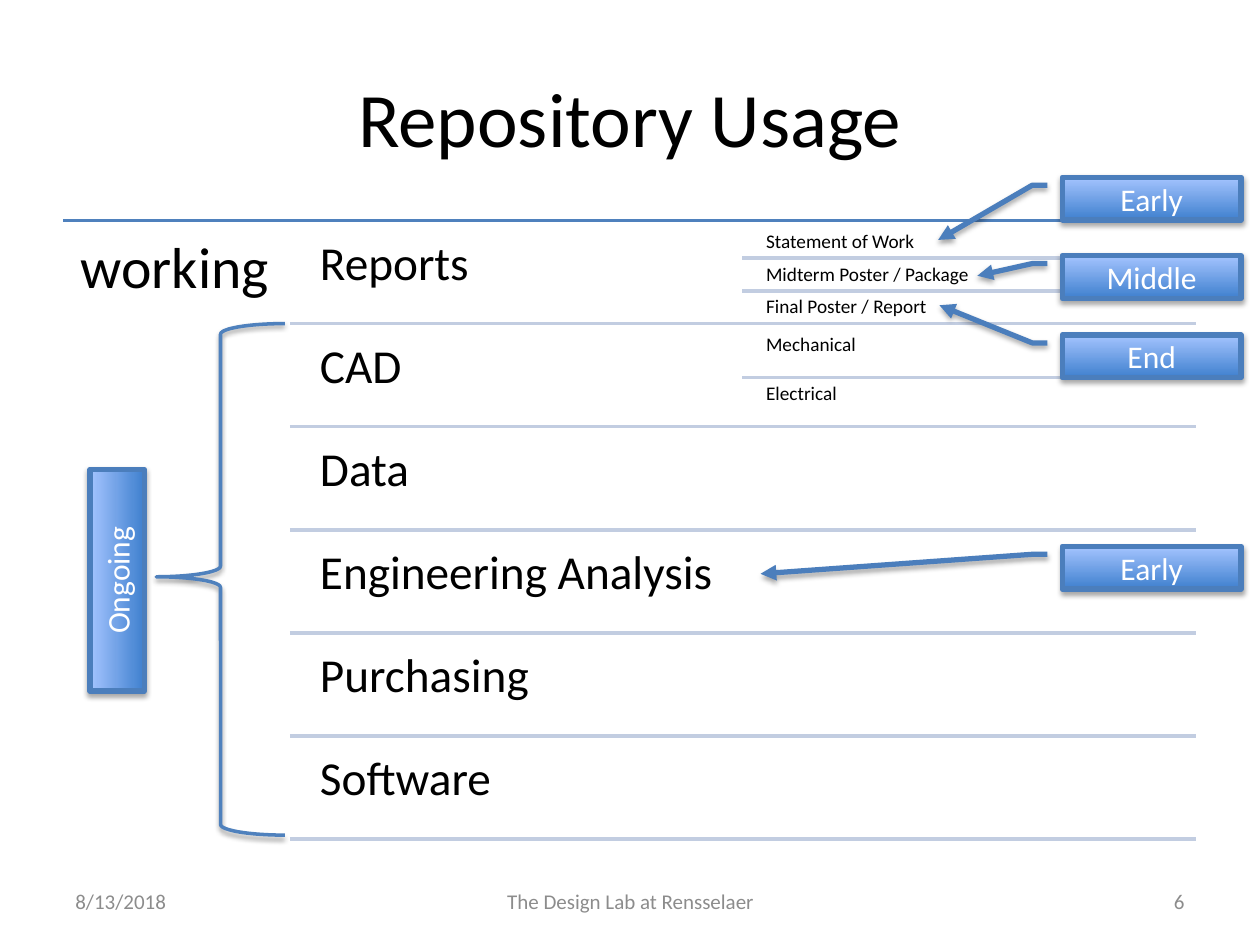
from dataclasses import dataclass

import pptx
import pptx.util
from lxml import etree
from pptx.dml.color import RGBColor
from pptx.enum.shapes import MSO_CONNECTOR, MSO_SHAPE
from pptx.enum.text import MSO_ANCHOR, PP_ALIGN
from pptx.oxml.ns import qn

COLORS = {
    "text": "000000", "footer": "8C8C8C", "label": "FFFFFF",
    "rule": "4F81BD", "divider": "C2CDE1", "border": "4B7EBC",
    "dark": "3F80CE", "light": "A4C4FF", "shadow": "000000",
}
FONT = "Calibri"

presentation = pptx.Presentation()
presentation.slide_width = pptx.util.Inches(10)
presentation.slide_height = pptx.util.Inches(7.5)
slide = presentation.slides.add_slide(presentation.slide_layouts[5])

# Grid: ten columns across the slide, six folder rows below the top rule
COLUMN = presentation.slide_width / 10
TOP, BOTTOM = 1.75, 6.66
ROW = (BOTTOM - TOP) / 6
GAP = 0.04


@dataclass
class Folder:
    name: str
    children: tuple[str, ...] = ()


@dataclass
class Callout:
    text: str
    row: float
    target_y: float  # arrow tip, as shares of the callout's own size
    target_x: float


FOLDERS = [
    Folder("Reports", ("Statement of Work", "Midterm Poster / Package", "Final Poster / Report")),
    Folder("CAD", ("Mechanical", "Electrical")),
    Folder("Data"),
    Folder("Engineering Analysis"),
    Folder("Purchasing"),
    Folder("Software"),
]
CALLOUTS = [
    Callout("Early", -0.42, 1.465, -0.693),
    Callout("Middle", 0.34, 0.473, -0.474),
    Callout("End", 1.11, -0.691, -0.686),
    Callout("Early", 3.16, 0.643, -1.686),
]


def columns(*values: float) -> list[int]:
    return [round(value * COLUMN) for value in values]


def row_top(index: float) -> float:
    return TOP + index * ROW


def color(name: str) -> RGBColor:
    return RGBColor.from_string(COLORS[name])


def format_text(shape, text: str, size: float, color_name: str, align=None, anchor=MSO_ANCHOR.MIDDLE) -> None:
    frame = shape.text_frame
    frame.text = text
    frame.word_wrap = True
    frame.vertical_anchor = anchor
    paragraph = frame.paragraphs[0]
    paragraph.alignment = align
    font = paragraph.runs[0].font
    font.name, font.size = FONT, pptx.util.Pt(size)
    font.color.rgb = color(color_name)


def add_label(text: str, left: float, top: float, width: float, height: float, size: float, inset: float) -> None:
    box = slide.shapes.add_textbox(*columns(left, top, width, height))
    format_text(box, text, size, "text", anchor=MSO_ANCHOR.TOP)
    frame = box.text_frame
    frame.margin_left = frame.margin_top = frame.margin_right = frame.margin_bottom = columns(inset)[0]
    frame.paragraphs[0].line_spacing = 0.9


def add_rule(left: float, right: float, top: float, color_name: str) -> None:
    line = slide.shapes.add_connector(MSO_CONNECTOR.STRAIGHT, *columns(left, top, right, top))
    line.line.color.rgb = color(color_name)
    line.line.width = pptx.util.Pt(2)
    etree.SubElement(line._element.spPr, qn("a:effectLst"))


def add_shadow(shape, opacity: int, distance: float) -> None:
    shape.shadow.inherit = False
    effects = shape._element.spPr.find(qn("a:effectLst"))
    shadow = etree.SubElement(
        effects, qn("a:outerShdw"), blurRad=str(pptx.util.Pt(3.1)),
        dist=str(pptx.util.Pt(distance)), dir="5400000", rotWithShape="0")
    shade = etree.SubElement(shadow, qn("a:srgbClr"), val=COLORS["shadow"])
    etree.SubElement(shade, qn("a:alpha"), val=str(opacity * 1000))


def add_badge(kind, text: str, left: float, top: float, width: float, height: float):
    badge = slide.shapes.add_shape(kind, *columns(left, top, width, height))
    badge.fill.gradient()
    badge.fill.gradient_angle = 90
    for stop, name, position in zip(badge.fill.gradient_stops, ("dark", "light"), (0, 1)):
        stop.color.rgb = color(name)
        stop.position = position
    badge.line.color.rgb = color("border")
    badge.line.width = pptx.util.Pt(3)
    add_shadow(badge, 35, 1.8)
    format_text(badge, text, 18, "label", PP_ALIGN.CENTER)
    return badge


def add_callout(callout: Callout) -> None:
    shape = add_badge(MSO_SHAPE.LINE_CALLOUT_2, callout.text, 8.43, row_top(callout.row), 1.42, 0.34)
    points = (0.188, -0.083, 0.188, -0.167, callout.target_y, callout.target_x)
    for index, value in enumerate(points):
        shape.adjustments[index] = value
    etree.SubElement(shape.line._get_or_add_ln(), qn("a:tailEnd"), type="triangle")


def add_folder(index: int, folder: Folder) -> None:
    top, bottom = row_top(index) + GAP, row_top(index + 1)
    add_label(folder.name, 2.43, top, 3.46, bottom - top, 27, 0.11)
    step = (bottom - top) / max(len(folder.children), 1)
    for number, child in enumerate(folder.children):
        child_top = top + number * step
        if number:
            add_rule(5.89, 9.36, child_top, "divider")
        add_label(child, 6.03, child_top, 3.46, step, 11, 0.05)
    add_rule(2.3, 9.49, bottom, "divider")


# Title
title = slide.shapes.title
title.left, title.top, title.width, title.height = columns(0.5, 0.3, 9, 1.25)
format_text(title, "Repository Usage", 44, "text", PP_ALIGN.CENTER)

# Folder tree
add_rule(0.5, 9.5, TOP, "rule")
add_label("working", 0.5, TOP, 1.8, BOTTOM - TOP, 33, 0.14)
for index, folder in enumerate(FOLDERS):
    add_folder(index, folder)

# Footer
for text, left, width, align in (
    ("8/13/2018", 0.5, 2.33, PP_ALIGN.LEFT),
    ("The Design Lab at Rensselaer", 3.42, 3.17, PP_ALIGN.CENTER),
    ("6", 7.17, 2.33, PP_ALIGN.RIGHT),
):
    footer = slide.shapes.add_textbox(*columns(left, 6.95, width, 0.4))
    format_text(footer, text, 12, "footer", align)

# Brace and badge for the ongoing folders
brace = slide.shapes.add_shape(MSO_SHAPE.LEFT_BRACE, *columns(1.24, row_top(1), 1.02, 4.06))
brace.adjustments[0], brace.adjustments[1] = 0.083, 0.495
brace.fill.background()
brace.line.color.rgb = color("rule")
brace.line.width = pptx.util.Pt(2)
add_shadow(brace, 38, 1.6)
ongoing = add_badge(MSO_SHAPE.RECTANGLE, "Ongoing", 0.05, 4.39, 1.76, 0.43)
ongoing.rotation = 270

# Project phase callouts
for callout in CALLOUTS:
    add_callout(callout)

presentation.save("out.pptx")
